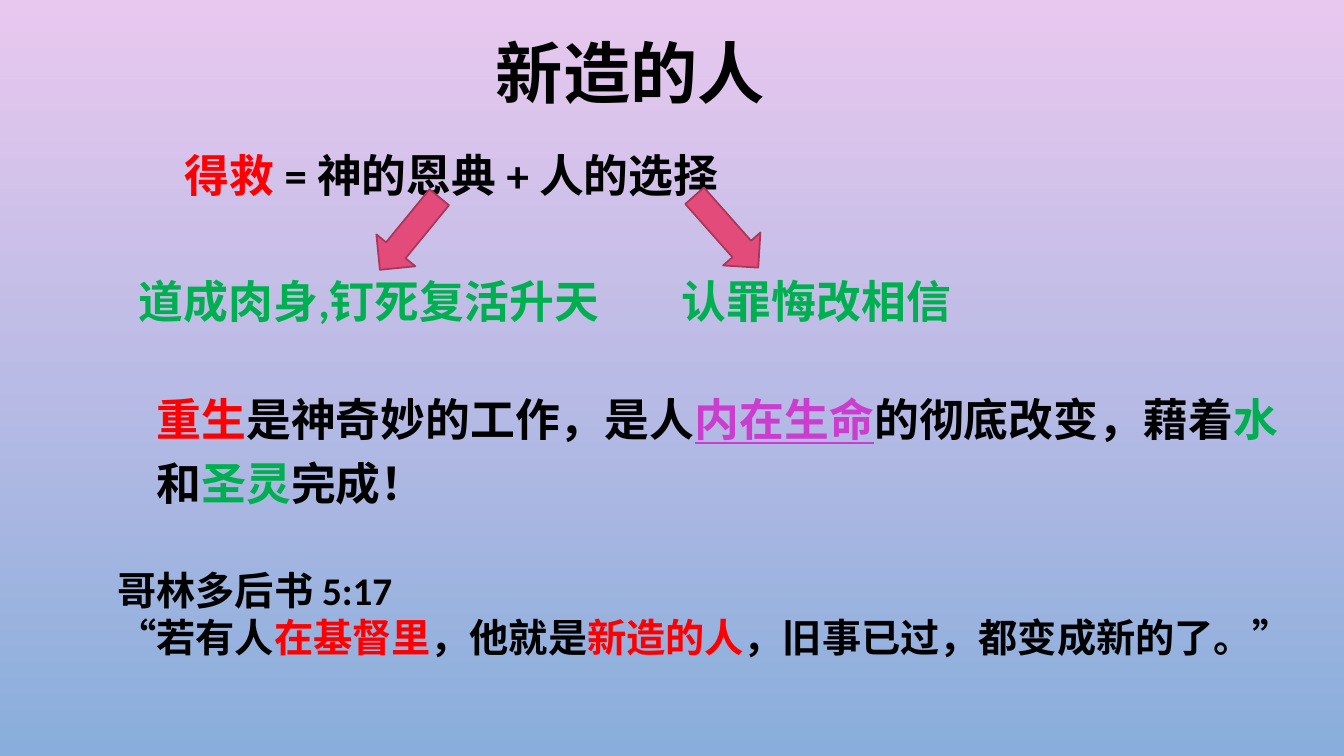
from pptx import Presentation
from pptx.dml.color import RGBColor
from pptx.enum.shapes import MSO_SHAPE
from pptx.enum.text import MSO_ANCHOR, PP_ALIGN
from pptx.util import Inches, Pt

ARROW = MSO_SHAPE.DOWN_ARROW
MID, TOP = MSO_ANCHOR.MIDDLE, MSO_ANCHOR.TOP
LEFT, MIDST = PP_ALIGN.LEFT, PP_ALIGN.CENTER
BLACK, RED, GREEN, PURPLE = "000000", "FF0000", "00B050", "CB3DCF"


def tint(code):
    return RGBColor.from_string(code)


class Page:
    """Hold the style and the slide; places are percent of the slide's size."""

    font = "Calibri"
    fill, edge = "E34B7A", "A8375A"

    def __init__(self, deck):
        self.wide, self.high = deck.slide_width, deck.slide_height
        self.slide = deck.slides.add_slide(deck.slide_layouts[6])

    def place(self, x, y, w, h):
        return (int(x * self.wide / 100), int(y * self.high / 100),
                int(w * self.wide / 100), int(h * self.high / 100))

    def back(self, upper, lower):
        fill = self.slide.background.fill
        fill.gradient()
        fill.gradient_angle = 270
        for stop, code, spot in zip(fill.gradient_stops, (upper, lower), (0, 1)):
            stop.color.rgb = tint(code)
            stop.position = spot

    def text(self, area, lines, size=32, lead=1.0, align=LEFT, anchor=TOP):
        frame = self.slide.shapes.add_textbox(*self.place(*area)).text_frame
        frame.word_wrap = True
        frame.vertical_anchor = anchor
        for i, line in enumerate(lines):
            para = frame.add_paragraph() if i else frame.paragraphs[0]
            para.alignment = align
            para.line_spacing = lead
            for words, code in line:
                run = para.add_run()
                run.text = words
                run.font.name = self.font
                run.font.size = Pt(size)
                run.font.bold = True
                run.font.color.rgb = tint(code)
                if code == PURPLE:
                    run.font.underline = True

    def arrow(self, area, turn):
        shape = self.slide.shapes.add_shape(ARROW, *self.place(*area))
        shape.rotation = turn
        shape.shadow.inherit = False
        shape.fill.solid()
        shape.fill.fore_color.rgb = tint(self.fill)
        shape.line.color.rgb = tint(self.edge)
        shape.line.width = Pt(1.25)


def main():
    deck = Presentation()
    deck.slide_width, deck.slide_height = Inches(13.33), Inches(7.5)
    page = Page(deck)
    page.back("E9C8EF", "89AEDB")

    page.text((8.1, 0, 77.6, 20.3), [[("新造的人", BLACK)]],
              size=48, lead=0.9, align=MIDST, anchor=MID)
    page.text((13, 17.5, 71.7, 9.2),
              [[("得救 ", RED), ("= 神的恩典 + 人的选择", BLACK)]], lead=1.2)
    page.text((10.9, 49.7, 85, 17.9), [[
        ("重生", RED), ("是神奇妙的工作，是人", BLACK), ("内在生命", PURPLE),
        ("的彻底改变，藉着", BLACK), ("水", GREEN), ("和", BLACK),
        ("圣灵", GREEN), ("完成！", BLACK)]], lead=1.2)

    for x, w, words in ((9.6, 38, "道成肉身,钉死复活升天"),
                        (50, 38.8, "认罪悔改相信")):
        page.text((x, 35.6, w, 8.5), [[(words, GREEN)]])
    page.arrow((28.6, 24.7, 3.75, 12.4), 39.3)
    page.arrow((52.2, 24.3, 3.7, 12.7), 318.5)

    page.text((8, 74.3, 92, 20.1), [
        [("哥林多后书 5:17", BLACK)],
        [("“若有人", BLACK), ("在基督里", RED), ("，他就是", BLACK),
         ("新造的人", RED), ("，旧事已过，都变成新的了。”", BLACK)]], size=28)
    deck.save("out.pptx")


if __name__ == "__main__":
    main()
